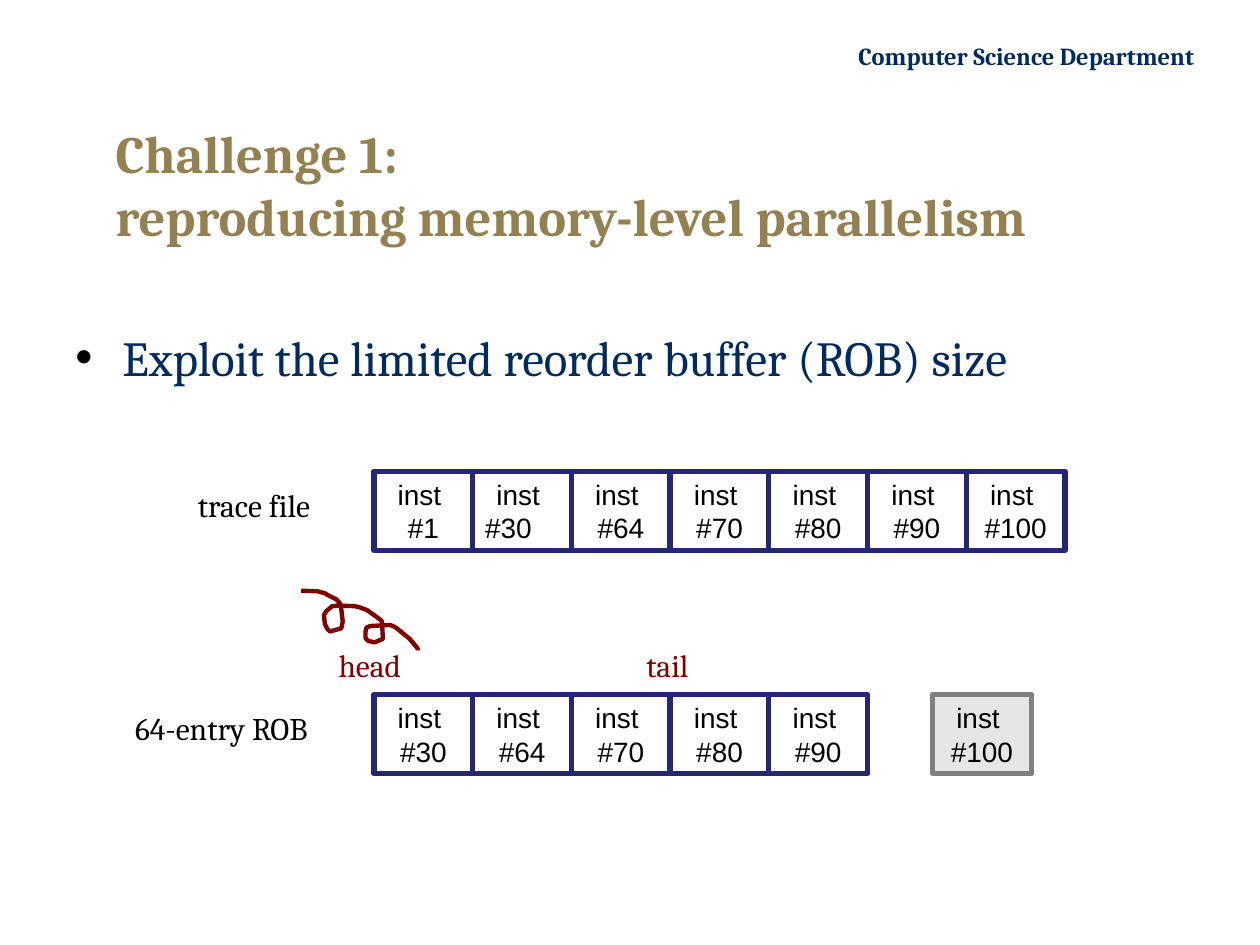
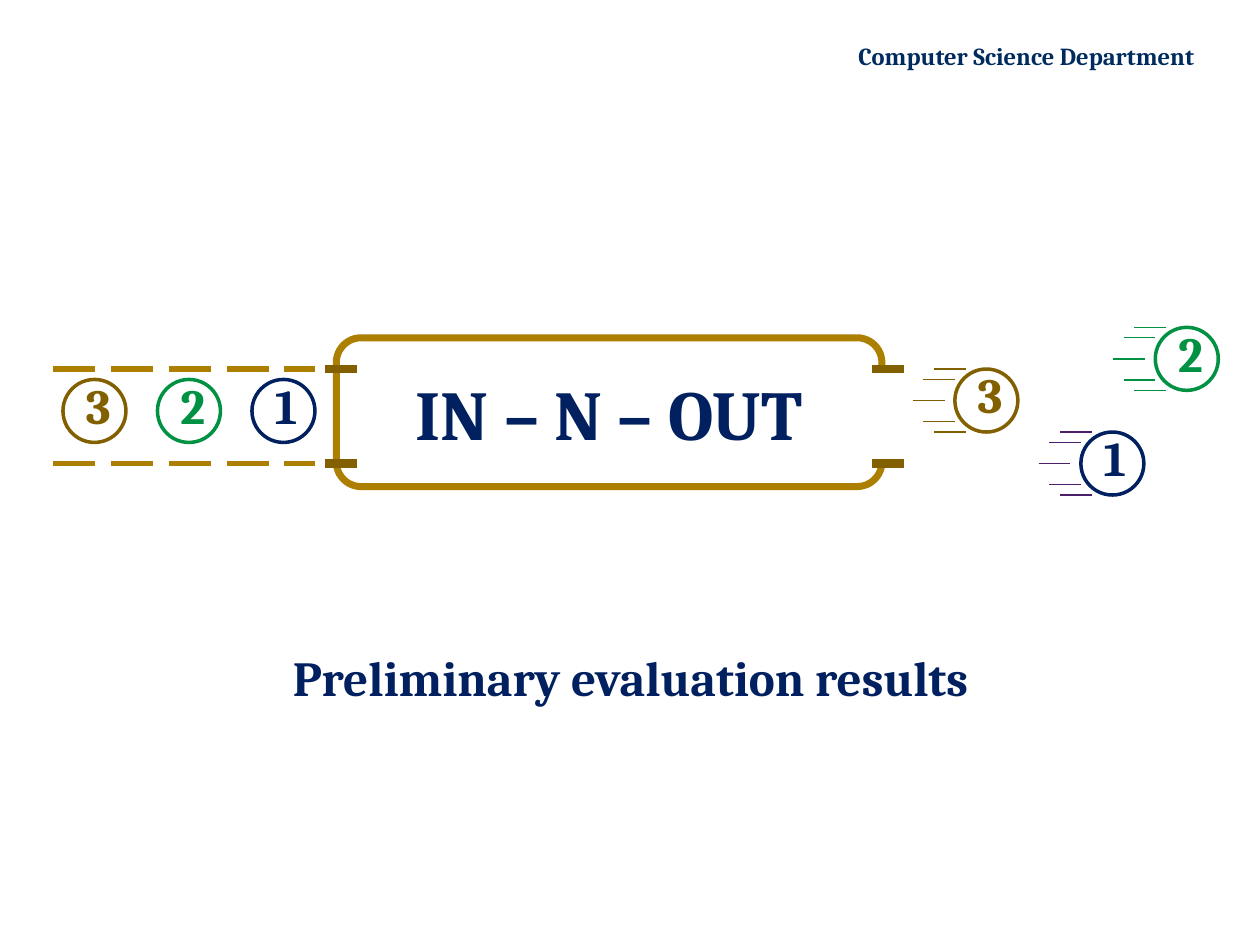
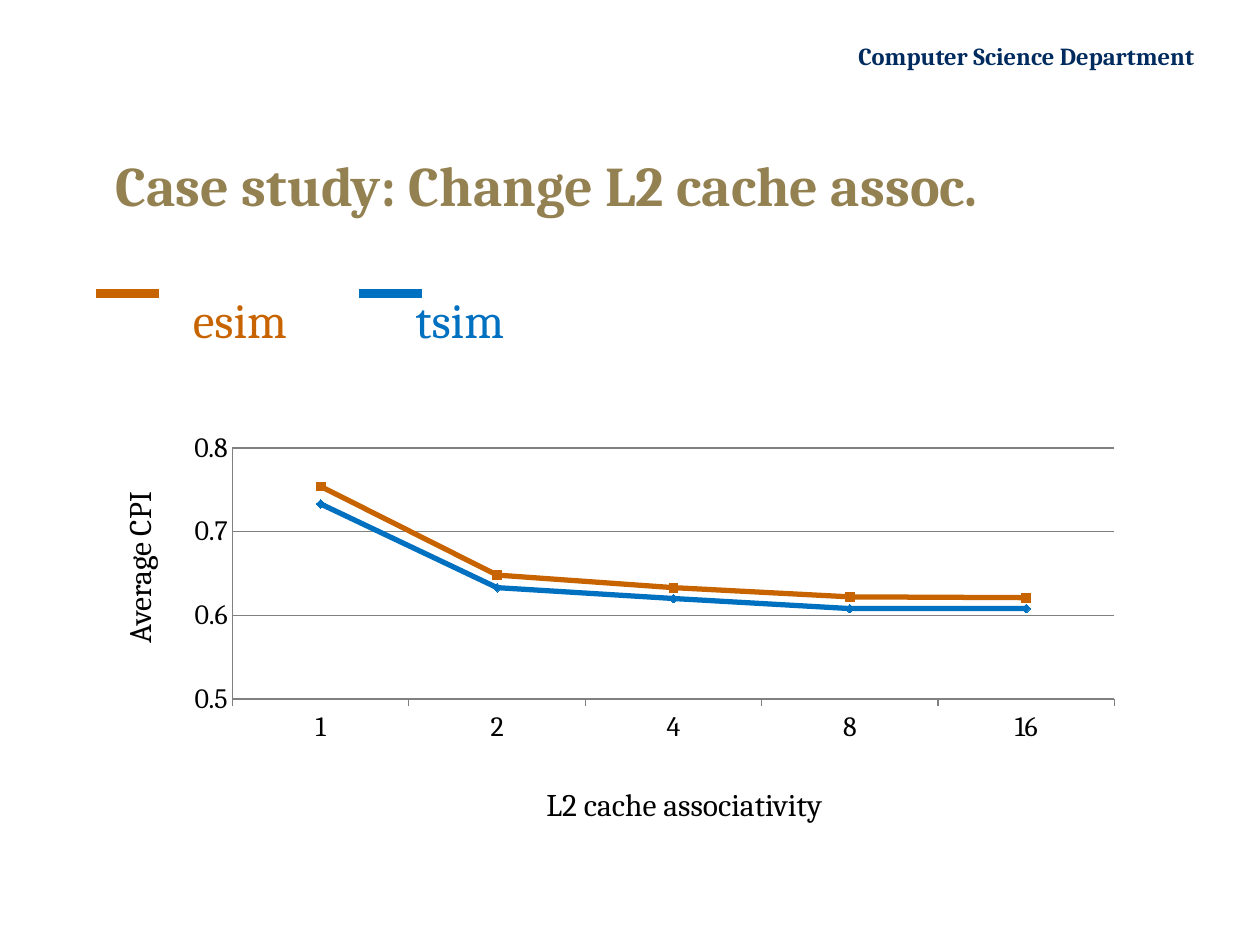
from lxml.etree import SubElement
from pptx import Presentation
from pptx.chart.data import CategoryChartData
from pptx.dml.color import RGBColor
from pptx.enum.chart import XL_CHART_TYPE, XL_MARKER_STYLE, XL_TICK_MARK
from pptx.enum.dml import MSO_LINE
from pptx.enum.shapes import MSO_CONNECTOR, MSO_SHAPE
from pptx.enum.text import MSO_ANCHOR, PP_ALIGN
from pptx.oxml import parse_xml
from pptx.oxml.ns import nsdecls, qn
from pptx.util import Cm, Pt

BLACK = RGBColor(0x00, 0x00, 0x00)
WHITE = RGBColor(0xFF, 0xFF, 0xFF)
NAVY = RGBColor(0x00, 0x2B, 0x5E)
SAND = RGBColor(0x94, 0x81, 0x51)
INDIGO = RGBColor(0x26, 0x26, 0x73)
MAROON = RGBColor(0x80, 0x00, 0x00)
GRAY = RGBColor(0x80, 0x80, 0x80)
PALE = RGBColor(0xE6, 0xE6, 0xE6)
DEEP = RGBColor(0x00, 0x20, 0x60)
GREEN = RGBColor(0x00, 0x92, 0x42)
BROWN = RGBColor(0x82, 0x60, 0x00)
GOLD = RGBColor(0xAC, 0x7F, 0x00)
PURPLE = RGBColor(0x4A, 0x20, 0x6A)
ORANGE = RGBColor(0xC8, 0x64, 0x00)
BLUE = RGBColor(0x00, 0x70, 0xC0)

SERIF = "Cambria"
CENTER = PP_ALIGN.CENTER
MIDDLE = MSO_ANCHOR.MIDDLE

CELL_W, CELL_H = 1.99, 1.6
ROW_LEFT = 7.54
BALL = 1.27
RAILS = (7.44, 9.35)
# Start of each speed streak relative to its ball
STREAKS = [(-0.42, 0), (-0.64, 0.21), (-0.85, 0.64), (-0.64, 1.06), (-0.42, 1.27)]
CURL = [
    (8.52, 13.44), (8.48, 13.23), (8.41, 13.06), (8.26, 12.88), (8.1, 12.75),
    (7.98, 12.65), (7.87, 12.6), (7.47, 12.62), (7.39, 12.65), (7.37, 12.73),
    (7.37, 12.87), (7.42, 12.92), (7.55, 12.95), (7.72, 12.88), (7.7, 12.52),
    (7.54, 12.4), (7.4, 12.3), (7.24, 12.24), (7.14, 12.22), (6.85, 12.21),
    (6.7, 12.22), (6.58, 12.32), (6.53, 12.4), (6.55, 12.58), (6.6, 12.68),
    (6.65, 12.73), (6.88, 12.67), (6.91, 12.53), (6.88, 12.27), (6.86, 12.17),
    (6.78, 12.08), (6.63, 12.01), (6.55, 11.96), (6.4, 11.92), (6.07, 11.91),
]


def style(thing, values):
    for name, value in values.items():
        setattr(thing, name, value)


def ink(font, color, size, name=SERIF, bold=False):
    style(font, {"size": Pt(size), "name": name, "bold": bold})
    font.color.rgb = color


def write(frame, lines, color, size, name=SERIF, bold=False,
          align=PP_ALIGN.LEFT, anchor=MSO_ANCHOR.TOP):
    style(frame, {"word_wrap": True, "vertical_anchor": anchor})
    for i, line in enumerate(lines):
        para = frame.paragraphs[0] if i == 0 else frame.add_paragraph()
        para.text, para.alignment = line, align
        for run in para.runs:
            ink(run.font, color, size, name, bold)


def label(slide, box, line, color, size, **how):
    frame = slide.shapes.add_textbox(*map(Cm, box)).text_frame
    write(frame, [line], color, size, **how)
    return frame


def paint(shape, fill=None, edge=None, width=0):
    shape.shadow.inherit = False
    if fill is None:
        shape.fill.background()
    else:
        shape.fill.solid()
        shape.fill.fore_color.rgb = fill
    if edge is None:
        shape.line.fill.background()
    else:
        shape.line.color.rgb = edge
        shape.line.width = Pt(width)


def block(slide, kind, box, **look):
    shape = slide.shapes.add_shape(kind, *map(Cm, box))
    paint(shape, **look)
    return shape


def dash(slide, x, y, length, color, width, pattern=None):
    """Draw a level line."""
    line = slide.shapes.add_connector(
        MSO_CONNECTOR.STRAIGHT, Cm(x), Cm(y), Cm(x + length), Cm(y))
    line.line.color.rgb = color
    style(line.line, {"width": Pt(width), "dash_style": pattern})
    SubElement(line._element.spPr, qn("a:effectLst"))


def page(deck):
    """Add a blank slide with the department header."""
    slide = deck.slides.add_slide(deck.slide_layouts[6])
    label(slide, (10.64, 0.71, 13.69, 0.86), "Computer Science Department",
          NAVY, 14, bold=True, align=PP_ALIGN.RIGHT)
    return slide


def title(slide, text, size):
    label(slide, (2.08, 2.54, 22.02, 2.34), text, SAND, size,
          bold=True, anchor=MIDDLE)


def cell(slide, x, y, number, fill=None, edge=INDIGO):
    shape = block(slide, MSO_SHAPE.RECTANGLE, (x, y, CELL_W, CELL_H),
                  fill=fill, edge=edge, width=3)
    write(shape.text_frame, ["inst ", f"#{number}"], BLACK, 16,
          name="Arial", align=CENTER)
    return shape


def row(slide, y, numbers):
    return [cell(slide, ROW_LEFT + i * CELL_W, y, number)
            for i, number in enumerate(numbers)]


def curl(slide):
    points = [(Cm(x), Cm(y)) for x, y in CURL]
    pen = slide.shapes.build_freeform(*points[0])
    pen.add_line_segments(points[1:], close=False)
    paint(pen.convert_to_shape(), edge=MAROON, width=2.5)


def ball(slide, x, y, digit, color):
    block(slide, MSO_SHAPE.OVAL, (x, y, BALL, BALL), edge=color, width=2)
    label(slide, (x + 0.21, y - 0.21, 0.85, 1.45), digit, color, 28,
          bold=True, align=CENTER)


def streaks(slide, x, y, color):
    for dx, dy in STREAKS:
        dash(slide, x + dx, y + dy, 0.64, color, 0.75)


def bullet(para):
    props = para._p.get_or_add_pPr()
    style_values = {"marL": str(Cm(0.95)), "indent": str(Cm(-0.95))}
    for name, value in style_values.items():
        props.set(name, value)
    tint = SubElement(props, qn("a:buClr"))
    SubElement(tint, qn("a:srgbClr")).set("val", str(BLACK))
    SubElement(props, qn("a:buFont")).set("typeface", "Arial")
    SubElement(props, qn("a:buChar")).set("char", "•")


def tabs(para, stops):
    holder = SubElement(para._p.get_or_add_pPr(), qn("a:tabLst"))
    for stop in stops:
        tab = SubElement(holder, qn("a:tab"))
        tab.set("pos", str(Cm(stop)))
        tab.set("algn", "l")


def legend(slide, names):
    frame = slide.shapes.add_textbox(
        Cm(2.11), Cm(5.72), Cm(22.02), Cm(11.43)).text_frame
    frame.word_wrap = True
    para = frame.paragraphs[0]
    tabs(para, (1.53, 6.02))
    for name, color in names:
        run = para.add_run()
        run.text = f"\t{name}"
        ink(run.font, color, 28)
    for x, (_, color) in zip((1.93, 7.24), names):
        dash(slide, x, 5.92, 1.27, color, 5)


def frame_plot(chart):
    """Fix the inner plot area as shares of the chart's size."""
    sides = {"x": 0.066, "y": 0.2, "w": 0.934, "h": 0.629}
    modes = "".join(f'<c:{s}Mode val="edge"/>' for s in "xy")
    sizes = "".join(f'<c:{s} val="{v}"/>' for s, v in sides.items())
    area = chart._chartSpace.chart.plotArea
    for old in area.findall(qn("c:layout")):
        area.remove(old)
    area.insert(0, parse_xml(
        f'<c:layout {nsdecls("c")}><c:manualLayout>'
        f'<c:layoutTarget val="inner"/>{modes}{sizes}'
        '</c:manualLayout></c:layout>'))


def plot(slide):
    data = CategoryChartData(number_format="0.0")
    data.categories = ["1", "2", "4", "8", "16"]
    data.add_series("Series 1", (0.754, 0.648, 0.633, 0.622, 0.621))
    data.add_series("Series 2", (0.733, 0.633, 0.62, 0.608, 0.608))
    box = map(Cm, (3.43, 7.42, 19.05, 8.05))
    chart = slide.shapes.add_chart(XL_CHART_TYPE.LINE_MARKERS, *box, data).chart
    style(chart, {"has_legend": False, "has_title": False})
    ink(chart.font, BLACK, 16)
    chart.plots[0].vary_by_categories = False
    frame_plot(chart)

    across, up = chart.category_axis, chart.value_axis
    style(across, {"major_tick_mark": XL_TICK_MARK.OUTSIDE,
                   "has_major_gridlines": False})
    style(up, {"major_tick_mark": XL_TICK_MARK.NONE, "minimum_scale": 0.5,
               "maximum_scale": 0.8, "major_unit": 0.1,
               "has_major_gridlines": True})
    style(up.tick_labels, {"number_format": "0.0",
                           "number_format_is_linked": False})
    for axis in (across, up):
        ink(axis.tick_labels.font, BLACK, 16)
    for part in (across, up, up.major_gridlines):
        part.format.line.color.rgb = GRAY
        part.format.line.width = Pt(0.75)

    looks = ((ORANGE, XL_MARKER_STYLE.SQUARE), (BLUE, XL_MARKER_STYLE.DIAMOND))
    for series, (color, mark) in zip(chart.plots[0].series, looks):
        series.smooth = False
        series.format.line.color.rgb = color
        series.format.line.width = Pt(3)
        style(series.marker, {"style": mark, "size": 5})
        series.marker.format.fill.solid()
        series.marker.format.fill.fore_color.rgb = color
        series.marker.format.line.color.rgb = color


def buffer_page(deck):
    slide = page(deck)
    title(slide, "Challenge 1: \vreproducing memory-level parallelism", 30)
    body = label(slide, (1.27, 6.48, 22.76, 10.9),
                 "Exploit the limited reorder buffer (ROB) size", NAVY, 28)
    bullet(body.paragraphs[0])
    mid = {"align": CENTER, "anchor": MIDDLE}
    label(slide, (3.48, 9.68, 3.28, 0.99), "trace file", BLACK, 18, **mid)
    label(slide, (2.18, 14.17, 4.57, 0.99), "64-entry ROB", BLACK, 18, **mid)
    trace = row(slide, 9.5, (1, 30, 64, 70, 80, 90, 100))
    trace[1].text_frame.paragraphs[1].alignment = PP_ALIGN.LEFT
    curl(slide)
    block(slide, MSO_SHAPE.RECTANGLE, (6.81, 13.11, 16, 3.2), fill=WHITE)
    row(slide, 14, (30, 64, 70, 80, 90))
    cell(slide, 18.8, 14, 100, fill=PALE, edge=GRAY)
    for x, name in ((6.5, "head"), (12.5, "tail")):
        label(slide, (x, 12.9, 1.91, 0.99), name, MAROON, 18, **mid)


def queue_page(deck):
    slide = page(deck)
    label(slide, (4.24, 12.93, 16.94, 1.45), "Preliminary evaluation results",
          DEEP, 28, bold=True, align=CENTER)
    core = block(slide, MSO_SHAPE.ROUNDED_RECTANGLE, (6.78, 6.81, 11, 3),
                 edge=GOLD, width=4)
    write(core.text_frame, ["IN – N – OUT"], DEEP, 40, bold=True,
          align=CENTER, anchor=MIDDLE)
    queue = (("3", BROWN), ("2", GREEN), ("1", DEEP))
    for i, (digit, color) in enumerate(queue):
        ball(slide, 1.27 + i * 1.905, 7.65, digit, color)
    leaving = ((23.29, 6.6, "2", GREEN, GREEN), (19.25, 7.44, "3", BROWN, BROWN),
               (21.79, 8.71, "1", DEEP, PURPLE))
    for x, y, digit, color, trail in leaving:
        ball(slide, x, y, digit, color)
        streaks(slide, x, y, trail)
    block(slide, MSO_SHAPE.FLOWCHART_PROCESS, (17.58, 7.44, 0.43, 1.91),
          fill=WHITE)
    for y in RAILS:
        dash(slide, 1.07, y, 5.28, GOLD, 3, MSO_LINE.LONG_DASH)
        for x in (6.55, 17.58):
            dash(slide, x, y, 0.64, BROWN, 5)


def cache_page(deck):
    slide = page(deck)
    title(slide, "Case study: Change L2 cache assoc.", 32)
    legend(slide, (("esim", ORANGE), ("tsim", BLUE)))
    mid = {"align": CENTER, "anchor": MIDDLE}
    label(slide, (9.35, 15.67, 8.89, 1.07), "L2 cache associativity",
          BLACK, 18, **mid)
    side = label(slide, (2.16, 8.69, 1.27, 5.51), "Average CPI",
                 BLACK, 18, **mid)
    side._txBody.bodyPr.set("vert", "vert270")
    plot(slide)


def main():
    deck = Presentation()
    style(deck, {"slide_width": Cm(25.4), "slide_height": Cm(19.05)})
    for build in (buffer_page, queue_page, cache_page):
        build(deck)
    deck.save("out.pptx")


if __name__ == "__main__":
    main()
